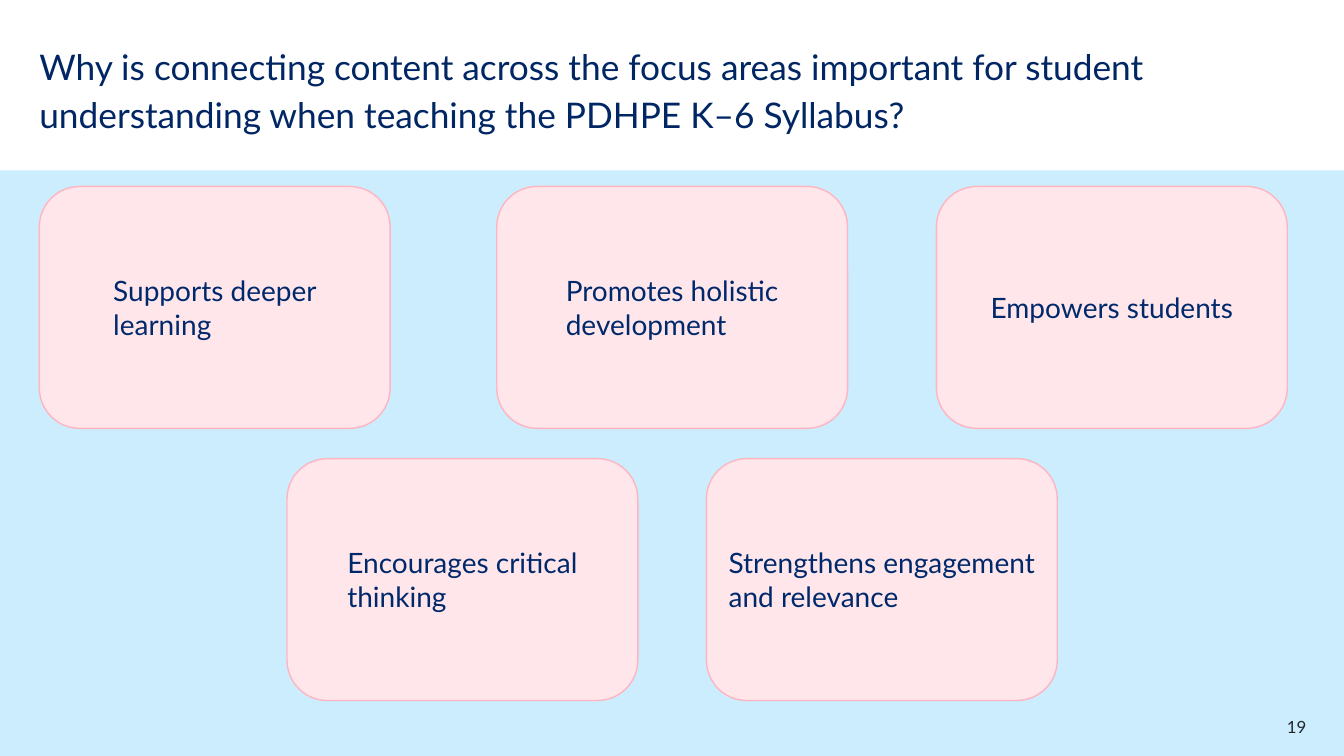
from dataclasses import dataclass

from pptx import Presentation
from pptx.dml.color import RGBColor as Rgb
from pptx.enum.shapes import MSO_SHAPE as Shape
from pptx.enum.text import MSO_ANCHOR as Anchor, PP_ALIGN as Align
from pptx.util import Pt


@dataclass(frozen=True)
class Theme:
    font: str = "Lato"
    backdrop: str = "CBEDFD"
    card_fill: str = "FFE6EA"
    card_line: str = "FFB5C1"
    title_color: str = "002664"
    card_color: str = "00296C"
    number_color: str = "22272B"
    title_size: float = 25.2
    card_size: float = 20
    number_size: float = 12


THEME = Theme()
PAGE_WIDTH, PAGE_HEIGHT = 960, 540
MARGIN = 28.1
BACKDROP_TOP = 121.7
CARD_WIDTH, CARD_HEIGHT = 250.6, 172.8
CARD_ROWS = [
    (133.2, [
        (MARGIN, "Supports deeper learning"),
        (354.8, "Promotes holistic development"),
        (668.9, "Empowers students"),
    ]),
    (327.6, [
        (205, "Encourages critical thinking"),
        (504.6, "Strengthens engagement and relevance"),
    ]),
]


def style(para, size, color):
    para.font.name = THEME.font
    para.font.size = Pt(size)
    para.font.color.rgb = Rgb.from_string(color)


def add_panel(page, kind, box, fill):
    """Add a filled shape without shadow or outline."""
    panel = page.shapes.add_shape(kind, *map(Pt, box))
    panel.shadow.inherit = False
    panel.fill.solid()
    panel.fill.fore_color.rgb = Rgb.from_string(fill)
    panel.line.fill.background()
    return panel


def add_label(page, box, text, size, color, spacing):
    """Add a text box without insets and return its paragraph."""
    frame = page.shapes.add_textbox(*map(Pt, box)).text_frame
    frame.word_wrap = True
    frame.margin_left = frame.margin_right = 0
    frame.margin_top = frame.margin_bottom = 0
    para = frame.paragraphs[0]
    para.text = text
    para.line_spacing = spacing
    style(para, size, color)
    return para


def add_card(page, box, text):
    """Add a rounded card whose left-aligned text block sits in its centre."""
    card = add_panel(page, Shape.ROUNDED_RECTANGLE, box, THEME.card_fill)
    card.line.color.rgb = Rgb.from_string(THEME.card_line)
    card.line.width = Pt(1)
    frame = card.text_frame
    frame.word_wrap = True
    frame.vertical_anchor = Anchor.MIDDLE
    frame._txBody.bodyPr.set("anchorCtr", "1")
    para = frame.paragraphs[0]
    para.text = text
    para.alignment = Align.LEFT
    style(para, THEME.card_size, THEME.card_color)


def add_card_page(deck, title, card_rows, number):
    page = deck.slides.add_slide(deck.slide_layouts[6])
    backdrop_box = (0, BACKDROP_TOP, PAGE_WIDTH, PAGE_HEIGHT - BACKDROP_TOP)
    add_panel(page, Shape.RECTANGLE, backdrop_box, THEME.backdrop)
    add_label(page, (MARGIN, MARGIN, 793.4, 67), title,
              THEME.title_size, THEME.title_color, 1.14)
    for top, cards in card_rows:
        for left, text in cards:
            add_card(page, (left, top, CARD_WIDTH, CARD_HEIGHT), text)
    number_para = add_label(page, (876.2, 513.4, 56.9, 14.4), number,
                            THEME.number_size, THEME.number_color, 0.9)
    number_para.alignment = Align.RIGHT


def main():
    deck = Presentation()
    deck.slide_width, deck.slide_height = Pt(PAGE_WIDTH), Pt(PAGE_HEIGHT)
    add_card_page(
        deck,
        "Why is connecting content across the focus areas important for student "
        "understanding when teaching the PDHPE K–6 Syllabus?",
        CARD_ROWS,
        "19",
    )
    deck.save("out.pptx")


if __name__ == "__main__":
    main()
